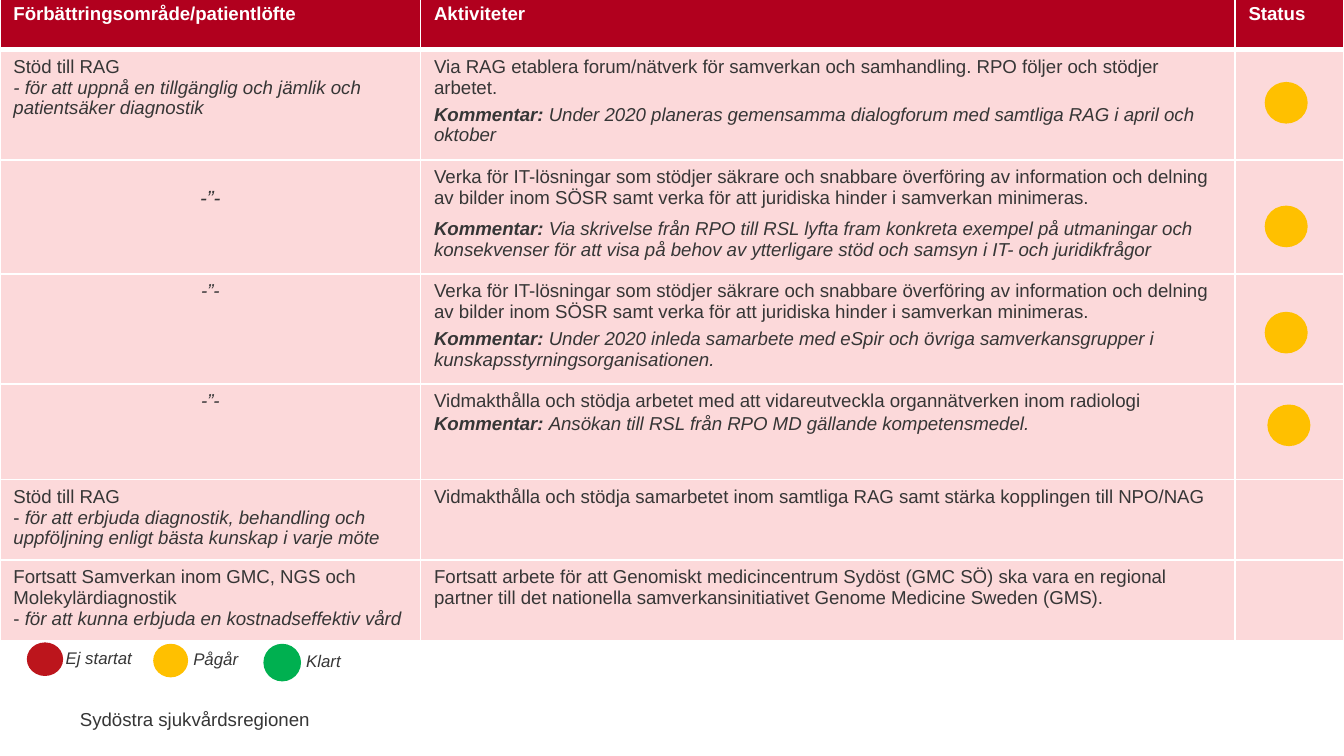
from dataclasses import dataclass
from itertools import accumulate

from lxml import etree
from pptx import Presentation
from pptx.dml.color import RGBColor
from pptx.enum.shapes import MSO_SHAPE
from pptx.enum.text import PP_ALIGN
from pptx.oxml.ns import qn
from pptx.util import Inches, Pt

OVAL = MSO_SHAPE.OVAL
LEFT, CENTER, RIGHT = PP_ALIGN.LEFT, PP_ALIGN.CENTER, PP_ALIGN.RIGHT


@dataclass
class Theme:
    font: str = "Arial"
    body: float = 10
    ditto: float = 11
    legend: float = 9
    ink: str = "363636"
    white: str = "FFFFFF"
    header: str = "B1001E"
    row: str = "FCD9DA"
    not_started: str = "BC151C"
    ongoing: str = "FFC000"
    done: str = "00B050"


theme = Theme()


def write(paragraph, runs, size, color, align=LEFT):
    """Fill a paragraph with (text, style) runs; style holds b and/or i."""
    paragraph.alignment = align
    font = paragraph.font
    font.name, font.size = theme.font, Pt(size)
    font.color.rgb = RGBColor.from_string(color)
    styles = {style for _, style in runs}
    for words, style in runs:
        start = len(paragraph.runs)
        for i, line in enumerate(words.split("\n")):
            if i:
                paragraph.add_line_break()
            if line:
                paragraph.add_run().text = line
        targets = [font] if len(styles) == 1 else [r.font for r in paragraph.runs[start:]]
        for target in targets:
            target.bold, target.italic = "b" in style, "i" in style


def add_dot(left, top, width, height, color):
    dot = slide.shapes.add_shape(OVAL, Inches(left), Inches(top), Inches(width), Inches(height))
    dot.shadow.inherit = False
    dot.fill.solid()
    dot.fill.fore_color.rgb = RGBColor.from_string(color)
    dot.line.fill.background()


# A 16:9 slide
prs = Presentation()
prs.slide_width, prs.slide_height = Inches(10), Inches(10) * 9 // 16
slide = prs.slides.add_slide(prs.slide_layouts[6])

# Grid of the table
TOP = -0.02
COLUMNS = [3.13, 6.06, 0.81]
ROWS = [0.39, 0.82, 0.85, 0.82, 0.71, 0.6, 0.6]
row_tops = list(accumulate(ROWS, initial=TOP))

# Content: area runs, activity, comment, gap before the comment in points
HEADINGS = ["Förbättringsområde/patientlöfte", "Aktiviteter", "Status"]
DITTO = [("-”-", "i")]
IT_SOLUTIONS = ("Verka för IT-lösningar som stödjer säkrare och snabbare överföring av information och "
                "delning av bilder inom SÖSR samt verka för att juridiska hinder i samverkan minimeras.")
ACTIVITIES = [
    ([("Stöd till RAG\n", ""),
      ("- för att uppnå en tillgänglig och jämlik och patientsäker diagnostik", "i")],
     "Via RAG etablera forum/nätverk för samverkan och samhandling. RPO följer och stödjer arbetet.",
     "Under 2020 planeras gemensamma dialogforum med samtliga RAG i april och oktober", 3.3),
    (DITTO, IT_SOLUTIONS,
     "Via skrivelse från RPO till RSL lyfta fram konkreta exempel på utmaningar och konsekvenser "
     "för att visa på behov av ytterligare stöd och samsyn i IT- och juridikfrågor", 5.5),
    (DITTO, IT_SOLUTIONS,
     "Under 2020 inleda samarbete med eSpir och övriga samverkansgrupper i "
     "kunskapsstyrningsorganisationen.", 3.3),
    (DITTO, "Vidmakthålla och stödja arbetet med att vidareutveckla organnätverken inom radiologi",
     "Ansökan till RSL från RPO MD gällande kompetensmedel.", 1.2),
    ([("Stöd till RAG\n- ", ""),
      ("för att erbjuda diagnostik, behandling och uppföljning enligt bästa kunskap i varje möte", "i")],
     "Vidmakthålla och stödja samarbetet inom samtliga RAG samt stärka kopplingen till NPO/NAG", None, 0),
    ([("Fortsatt Samverkan inom GMC, NGS och Molekylärdiagnostik \n- ", ""),
      ("för att kunna erbjuda en kostnadseffektiv vård", "i")],
     "Fortsatt arbete för att Genomiskt medicincentrum Sydöst (GMC SÖ) ska vara en regional partner "
     "till det nationella samverkansinitiativet Genome Medicine Sweden (GMS).", None, 0),
]

# Table with fills and white rules
table = slide.shapes.add_table(len(ROWS), len(COLUMNS), 0, Inches(TOP),
                               Inches(sum(COLUMNS)), Inches(sum(ROWS))).table
table.horz_banding = False
for column, width in zip(table.columns, COLUMNS):
    column.width = Inches(width)
for r, height in enumerate(ROWS):
    table.rows[r].height = Inches(height)
    for cell in table.rows[r].cells:
        cell.fill.solid()
        cell.fill.fore_color.rgb = RGBColor.from_string(theme.row if r else theme.header)
        cell.text_frame.paragraphs[0].font.size = Pt(theme.body)
        heavy = {0: "lnB", 1: "lnT"}.get(r)
        for i, side in enumerate(("lnL", "lnR", "lnT", "lnB")):
            rule = etree.Element(qn("a:" + side), w=str(Pt(3 if side == heavy else 1)))
            paint = etree.SubElement(rule, qn("a:solidFill"))
            etree.SubElement(paint, qn("a:srgbClr"), val=theme.white)
            cell._tc.get_or_add_tcPr().insert(i, rule)

# Table text
for c, heading in enumerate(HEADINGS):
    write(table.cell(0, c).text_frame.paragraphs[0], [(heading, "b")], theme.body, theme.white)
for r, (area, activity, comment, gap) in enumerate(ACTIVITIES, start=1):
    lowered = r == 2
    area_cell = table.cell(r, 0)
    if lowered:
        area_cell.margin_top = Inches(0.2)
    write(area_cell.text_frame.paragraphs[0], area, theme.ditto if lowered else theme.body,
          theme.ink, CENTER if area is DITTO else LEFT)
    activity_frame = table.cell(r, 1).text_frame
    write(activity_frame.paragraphs[0], [(activity, "")], theme.body, theme.ink)
    if comment:
        note = activity_frame.add_paragraph()
        write(note, [("Kommentar: ", "bi"), (comment, "i")], theme.body, theme.ink)
        note.space_before = Pt(gap)

# Legend dots
add_dot(1.96, 4.79, 0.28, 0.28, theme.done)
add_dot(0.2, 4.78, 0.27, 0.25, theme.not_started)
add_dot(1.14, 4.79, 0.26, 0.25, theme.ongoing)

# Status dots: row, left, drop below the row's top
for r, left, drop in [(1, 9.41, 0.24), (2, 9.41, 0.34), (3, 9.41, 0.28), (4, 9.43, 0.15)]:
    add_dot(left, row_tops[r] + drop, 0.32, 0.31, theme.ongoing)

# Legend labels and footer
for words, style, size, align, *box in [
    ("Ej startat", "i", theme.legend, LEFT, 0.39, 4.77, 0.7, 0.25),
    ("Pågår", "i", theme.legend, LEFT, 1.34, 4.78, 0.54, 0.25),
    ("Klart", "i", theme.legend, LEFT, 2.18, 4.79, 0.46, 0.25),
    ("Sydöstra sjukvårdsregionen", "", theme.body, RIGHT, 0.48, 5.22, 1.92, 0.27),
]:
    label = slide.shapes.add_textbox(*map(Inches, box)).text_frame
    label.word_wrap = False
    write(label.paragraphs[0], [(words, style)], size, theme.ink, align)

prs.save("out.pptx")
